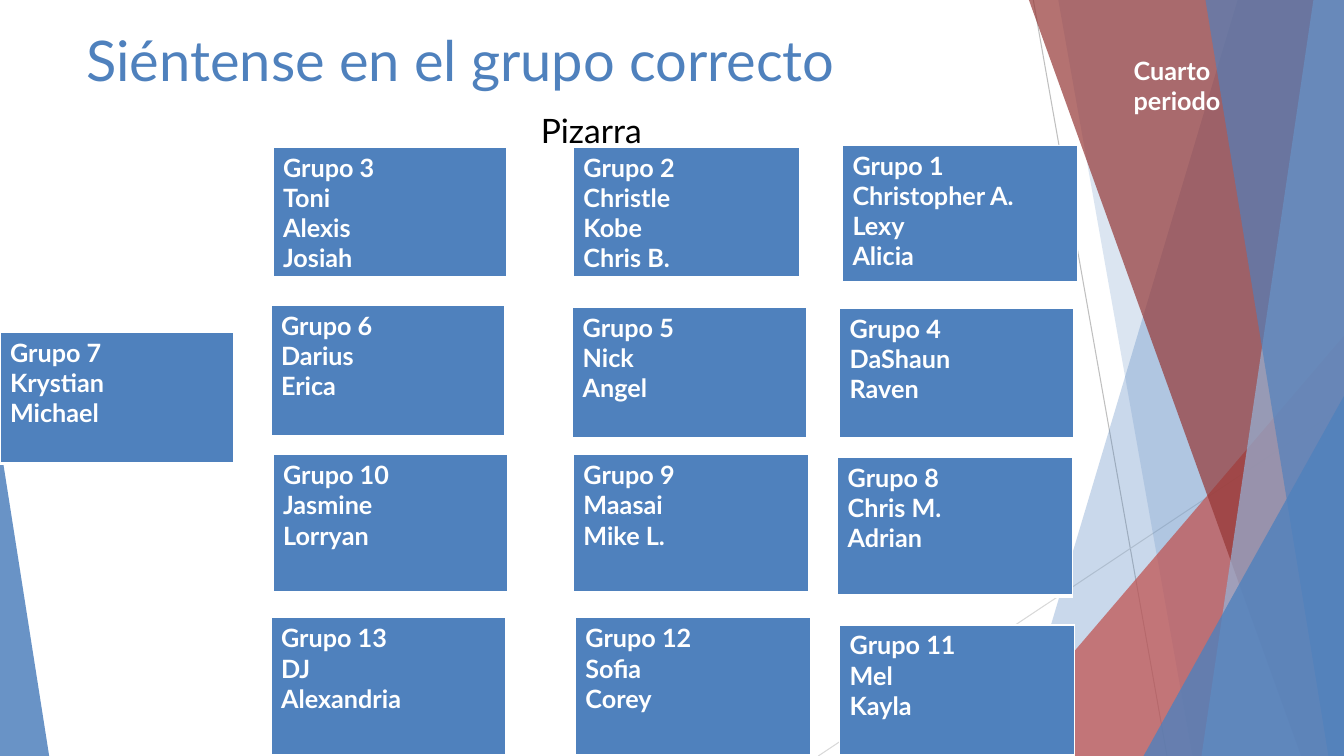
import lxml.etree
import pptx
import pptx.dml.color
import pptx.enum.shapes
import pptx.oxml
import pptx.oxml.ns
import pptx.util
from pptx.util import Cm, Pt

WIDTH, HEIGHT = 33.87, 19.05
FONT = "Lato"
COLORS = {
    "blue": "4F81BD",
    "light blue": "95B3D7",
    "red": "C0504D",
    "dark red": "953735",
    "white": "FFFFFF",
    "black": "000000",
    "grey": "BFBFBF",
    "light grey": "D9D9D9",
}

# left, top, width, height in cm; group number; members
GROUPS = [
    (21.23, 3.66, 5.92, 3.48, 1, ["Christopher A.", "Lexy", "Alicia"]),
    (14.45, 3.71, 5.69, 3.3, 2, ["Christle", "Kobe", "Chris B."]),
    (6.88, 3.71, 5.89, 3.3, 3, ["Toni", "Alexis", "Josiah"]),
    (21.16, 7.77, 5.89, 3.3, 4, ["DaShaun", "Raven"]),
    (14.43, 7.75, 5.89, 3.3, 5, ["Nick", "Angel"]),
    (6.83, 7.7, 5.89, 3.3, 6, ["Darius", "Erica"]),
    (0, 8.38, 5.89, 3.3, 7, ["Krystian", "Michael"]),
    (21.11, 11.53, 5.92, 3.48, 8, ["Chris M.", "Adrian"]),
    (21.16, 15.75, 5.92, 3.3, 11, ["Mel", "Kayla"]),
    (14.45, 11.46, 5.92, 3.48, 9, ["Maasai", "Mike L."]),
    (14.5, 15.57, 5.92, 3.48, 12, ["Sofia", "Corey"]),
    (6.88, 11.46, 5.92, 3.48, 10, ["Jasmine", "Lorryan"]),
    (6.83, 15.57, 5.92, 3.48, 13, ["DJ", "Alexandria"]),
]


def rgb(color):
    return pptx.dml.color.RGBColor.from_string(COLORS[color])


def write_text(text_frame, text, size=18, color="white", bold=False):
    """Fill a text frame with one paragraph per line of text."""
    text_frame.word_wrap = True
    for index, line in enumerate(text.split("\n")):
        paragraph = text_frame.add_paragraph() if index else text_frame.paragraphs[0]
        run = paragraph.add_run()
        run.text = line
        run.font.name = FONT
        run.font.size = Pt(size)
        run.font.bold = bold
        run.font.color.rgb = rgb(color)


def add_label(slide, box, text, **text_format):
    shape = slide.shapes.add_textbox(*map(Cm, box))
    write_text(shape.text_frame, text, **text_format)


def paint(shape, color, opacity):
    """Give a shape a translucent fill without line or shadow."""
    shape.shadow.inherit = False
    shape.line.fill.background()
    shape.fill.solid()
    shape.fill.fore_color.rgb = rgb(color)
    color_element = shape.fill._xPr.find(".//" + pptx.oxml.ns.qn("a:srgbClr"))
    alpha = lxml.etree.SubElement(color_element, pptx.oxml.ns.qn("a:alpha"))
    alpha.set("val", str(opacity * 1000))


def add_band(slide, top_left, bottom_left, color, opacity):
    """Draw a full-height band that reaches the right edge of the slide."""
    builder = slide.shapes.build_freeform(Cm(top_left), 0)
    corners = [(WIDTH, 0), (WIDTH, HEIGHT), (bottom_left, HEIGHT)]
    builder.add_line_segments([(Cm(x), Cm(y)) for x, y in corners], close=True)
    paint(builder.convert_to_shape(), color, opacity)


def add_triangle(slide, box, apex, color, opacity):
    triangle = pptx.enum.shapes.MSO_SHAPE.ISOSCELES_TRIANGLE
    shape = slide.shapes.add_shape(triangle, *map(Cm, box))
    shape.adjustments[0] = apex
    paint(shape, color, opacity)


def add_line(slide, ends, color):
    straight = pptx.enum.shapes.MSO_CONNECTOR.STRAIGHT
    connector = slide.shapes.add_connector(straight, *map(Cm, ends))
    connector.line.color.rgb = rgb(color)
    connector.line.width = Pt(0.75)
    properties = connector._element.spPr
    lxml.etree.SubElement(properties, pptx.oxml.ns.qn("a:effectLst"))


def add_borders(cell):
    properties = cell._tc.get_or_add_tcPr()
    for index, (side, width) in enumerate([("L", 1), ("R", 1), ("T", 1), ("B", 3)]):
        border = pptx.oxml.parse_xml(
            f'<a:ln{side} {pptx.oxml.ns.nsdecls("a")} w="{Pt(width)}"><a:solidFill>'
            f'<a:srgbClr val="{COLORS["white"]}"/></a:solidFill></a:ln{side}>'
        )
        properties.insert(index, border)


def add_group(slide, box, number, members):
    table = slide.shapes.add_table(1, 1, *map(Cm, box)).table
    table.first_row = False
    table.horz_banding = False
    cell = table.cell(0, 0)
    cell.fill.solid()
    cell.fill.fore_color.rgb = rgb("blue")
    add_borders(cell)
    write_text(cell.text_frame, "\n".join([f"Grupo {number}", *members]), bold=True)


def add_background(slide):
    add_line(slide, (26.04, 0, 29.41, HEIGHT), "grey")
    add_line(slide, (WIDTH, 10.24, 20.62, HEIGHT), "light grey")
    add_band(slide, 31.19, 25.5, "blue", 30)
    add_band(slide, 26.67, 30.05, "blue", 20)
    add_triangle(slide, (24.82, 8.46, 9.05, 10.59), 1, "red", 72)
    add_band(slide, 25.93, 32.79, "dark red", 70)
    add_band(slide, 33.1, 30.28, "light blue", 70)
    add_band(slide, 30.38, 33.48, "blue", 65)
    add_triangle(slide, (28.82, 9.98, 5.05, 9.07), 1, "blue", 80)
    add_triangle(slide, (0, 11.15, 1.24, 7.9), 0, "blue", 85)


def main():
    presentation = pptx.Presentation()
    presentation.slide_width = Cm(WIDTH)
    presentation.slide_height = Cm(HEIGHT)
    slide = presentation.slides.add_slide(presentation.slide_layouts[6])
    add_background(slide)
    add_label(slide, (1.93, 0.53, 23.88, 2), "Siéntense en el grupo correcto",
              size=40, color="blue")
    add_label(slide, (13.38, 2.64, 5, 1.2), "Pizarra", size=24, color="black")
    for *box, number, members in GROUPS:
        add_group(slide, box, number, members)
    add_label(slide, (28.32, 1.27, 4.57, 1.8), "Cuarto periodo", bold=True)
    presentation.save("out.pptx")


if __name__ == "__main__":
    main()
